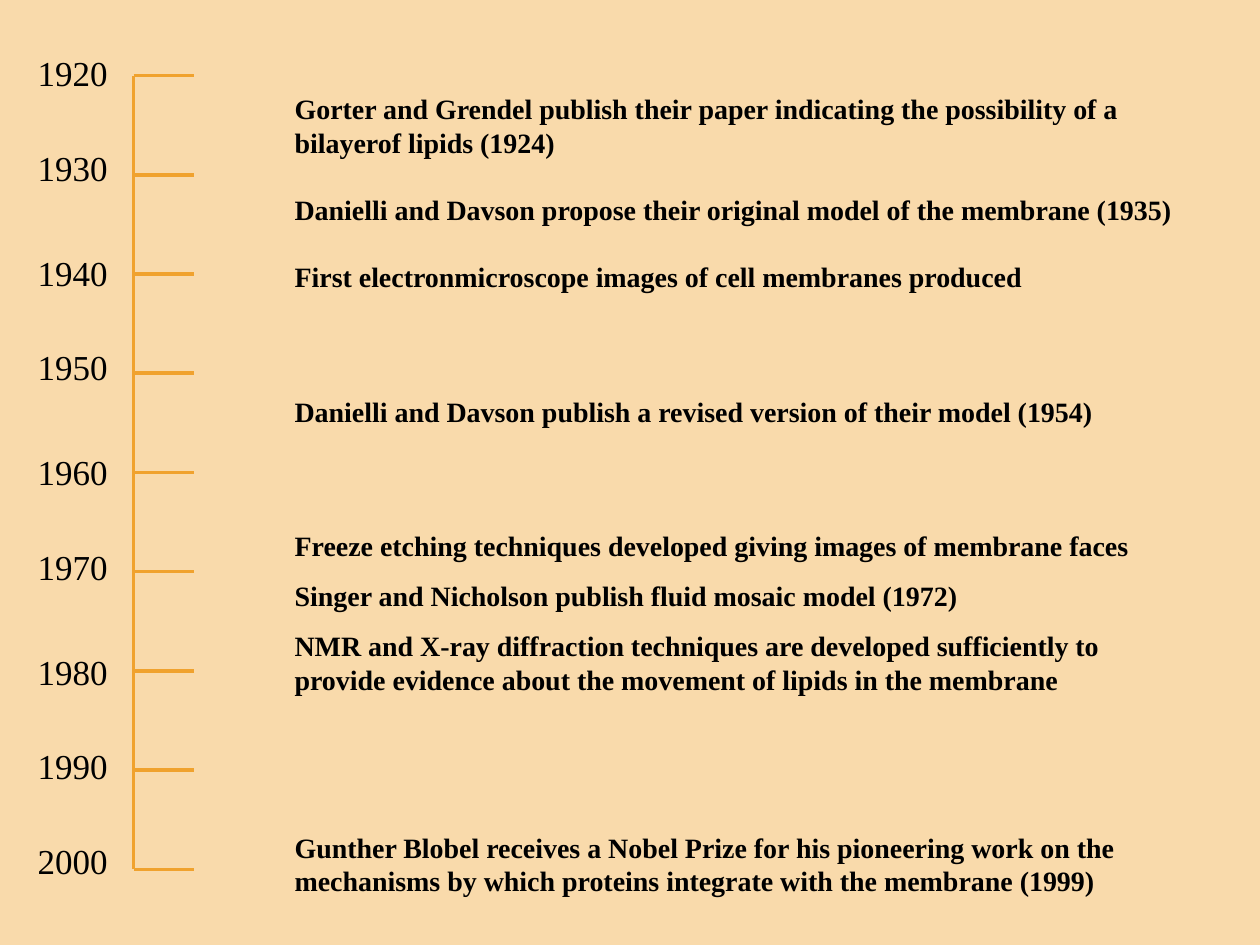
from pptx import Presentation
from pptx.dml.color import RGBColor
from pptx.enum.shapes import MSO_CONNECTOR
from pptx.enum.text import MSO_AUTO_SIZE
from pptx.oxml.ns import qn
from pptx.util import Inches, Pt
from lxml.etree import SubElement

SAND = RGBColor(0xF9, 0xDA, 0xAB)
ORANGE = RGBColor(0xF0, 0xA2, 0x2E)
BLACK = RGBColor(0, 0, 0)

# Content: (text, space before in points)
DECADE_GAPS = [0, 30, 36, 30, 36, 30, 36, 30, 30]
DECADES = [(str(1920 + 10 * i), gap) for i, gap in enumerate(DECADE_GAPS)]

EVENT_LINE = 19.2
EVENTS = [
    ("Gorter and Grendel publish their paper indicating the possibility "
     "of a bilayerof lipids (1924)", 0),
    ("Danielli and Davson propose their original model of the membrane (1935)",
     EVENT_LINE),
    ("First electronmicroscope images of cell membranes produced", EVENT_LINE),
    ("Danielli and Davson publish a revised version of their model (1954)",
     3 * EVENT_LINE),
    ("Freeze etching techniques developed giving images of membrane faces",
     3 * EVENT_LINE),
    ("Singer and Nicholson publish fluid mosaic model (1972)", 9.4),
    ("NMR and X-ray diffraction techniques are developed sufficiently to "
     "provide evidence about the movement of lipids in the membrane", 9.4),
    ("Gunther Blobel receives a Nobel Prize for his pioneering work on the "
     "mechanisms by which proteins integrate with the membrane (1999)",
     4 * EVENT_LINE),
]

# Formats and places
DECADE_FONT = {"name": "Times New Roman", "size": Pt(20), "bold": False}
EVENT_FONT = {"name": "Times New Roman", "size": Pt(16), "bold": True}
DECADE_BOX = (0.2, 0.36, 0.87, 6.75)
EVENT_BOX = (2.24, 0.68, 7.24, 6.56)
AXIS_X, TICK_END = 1.06, 1.54
AXIS_TOP, AXIS_BOTTOM = 0.6, 6.9


def add_line(slide, *ends):
    line = slide.shapes.add_connector(MSO_CONNECTOR.STRAIGHT, *map(Inches, ends))
    line.line.color.rgb = ORANGE
    line.line.width = Pt(2)
    SubElement(line._element.spPr, qn("a:effectLst"))


def add_column(slide, box, entries, font_format):
    frame = slide.shapes.add_textbox(*map(Inches, box)).text_frame
    frame.word_wrap = True
    frame.auto_size = MSO_AUTO_SIZE.SHAPE_TO_FIT_TEXT
    for i, (text, gap) in enumerate(entries):
        entry = frame.add_paragraph() if i else frame.paragraphs[0]
        entry.space_before = Pt(gap)
        run = entry.add_run()
        run.text = text
        run.font.color.rgb = BLACK
        for key, value in font_format.items():
            setattr(run.font, key, value)


def main():
    prs = Presentation()
    prs.slide_width, prs.slide_height = Inches(10), Inches(7.5)
    slide = prs.slides.add_slide(prs.slide_layouts[6])
    slide.background.fill.solid()
    slide.background.fill.fore_color.rgb = SAND

    # Time axis with one tick per decade
    add_line(slide, AXIS_X, AXIS_TOP, AXIS_X, AXIS_BOTTOM)
    step = (AXIS_BOTTOM - AXIS_TOP) / (len(DECADES) - 1)
    for i in range(len(DECADES)):
        y = AXIS_TOP + i * step
        add_line(slide, AXIS_X, y, TICK_END, y)

    # Events and decade labels
    add_column(slide, EVENT_BOX, EVENTS, EVENT_FONT)
    add_column(slide, DECADE_BOX, DECADES, DECADE_FONT)
    prs.save("out.pptx")


if __name__ == "__main__":
    main()
